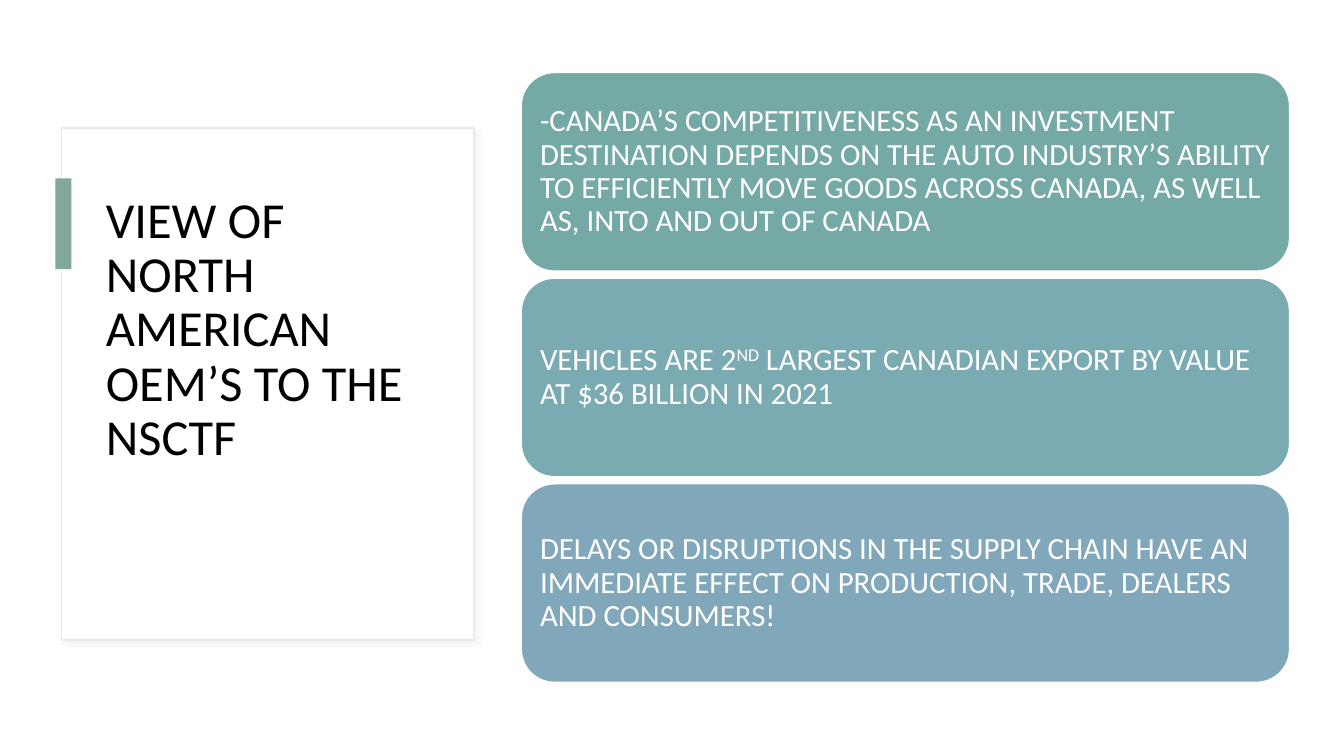
from dataclasses import dataclass

from lxml.etree import SubElement
from pptx import Presentation
from pptx.dml.color import RGBColor
from pptx.enum.shapes import MSO_SHAPE
from pptx.enum.text import MSO_ANCHOR, MSO_AUTO_SIZE, PP_ALIGN
from pptx.oxml.ns import qn
from pptx.shapes.autoshape import Shape
from pptx.slide import Slide
from pptx.text.text import TextFrame
from pptx.util import Inches, Pt

WHITE = RGBColor(0xFF, 0xFF, 0xFF)
BLACK = RGBColor(0x00, 0x00, 0x00)
PANEL_LINE = RGBColor(0xE5, 0xEA, 0xF0)
ACCENT_GREEN = RGBColor(0x81, 0xAA, 0x96)
TEAL = RGBColor(0x74, 0xA9, 0xA5)
AQUA = RGBColor(0x7A, 0xAB, 0xB2)
STEEL_BLUE = RGBColor(0x81, 0xA7, 0xBB)
SHADOW_GREY = "D9D9D9"

FONT = "Calibri"
CARD_LEFT, CARD_TOP = 5.17, 0.72
CARD_WIDTH, CARD_HEIGHT = 7.62, 1.97
CARD_PITCH = 2.04


@dataclass(frozen=True)
class Box:
    """A rectangle in inches."""
    left: float
    top: float
    width: float
    height: float

    def lengths(self) -> tuple[int, ...]:
        return tuple(Inches(value) for value in
                     (self.left, self.top, self.width, self.height))


@dataclass(frozen=True)
class Span:
    text: str
    superscript: bool = False


@dataclass(frozen=True)
class Card:
    fill: RGBColor
    spans: tuple[Span, ...]


CARDS = (
    Card(TEAL, (Span("-CANADA’S COMPETITIVENESS AS AN INVESTMENT DESTINATION "
                     "DEPENDS ON THE AUTO INDUSTRY’S ABILITY TO EFFICIENTLY "
                     "MOVE GOODS ACROSS CANADA, AS WELL AS, INTO AND OUT OF "
                     "CANADA"),)),
    Card(AQUA, (Span("VEHICLES ARE 2"), Span("ND", superscript=True),
                Span(" LARGEST CANADIAN EXPORT BY VALUE AT $36 BILLION IN 2021"))),
    Card(STEEL_BLUE, (Span("DELAYS OR DISRUPTIONS IN THE SUPPLY CHAIN HAVE AN "
                           "IMMEDIATE EFFECT ON PRODUCTION, TRADE, DEALERS AND "
                           "CONSUMERS!"),)),
)


def write(frame: TextFrame, spans: tuple[Span, ...], *, size: float,
          color: RGBColor, anchor: MSO_ANCHOR, side_inset: float = 0.1,
          end_inset: float = 0.05) -> None:
    frame.word_wrap = True
    frame.auto_size = MSO_AUTO_SIZE.NONE
    frame.vertical_anchor = anchor
    frame.margin_left = frame.margin_right = Inches(side_inset)
    frame.margin_top = frame.margin_bottom = Inches(end_inset)
    para = frame.paragraphs[0]
    para.alignment = PP_ALIGN.LEFT
    para.line_spacing = 0.9
    for span in spans:
        run = para.add_run()
        run.text = span.text
        run.font.name = FONT
        run.font.size = Pt(size)
        run.font.color.rgb = color
        if span.superscript:
            run._r.get_or_add_rPr().set("baseline", "30000")


def add_block(page: Slide, kind: MSO_SHAPE, box: Box, fill: RGBColor,
              line: RGBColor | None = None) -> Shape:
    block = page.shapes.add_shape(kind, *box.lengths())
    block.shadow.inherit = False
    block.fill.solid()
    block.fill.fore_color.rgb = fill
    if line is None:
        block.line.fill.background()
    else:
        block.line.color.rgb = line
        block.line.width = Pt(1)
    return block


def add_soft_shadow(block: Shape) -> None:
    effects = block._element.spPr.find(qn("a:effectLst"))
    shadow = SubElement(effects, qn("a:outerShdw"), blurRad=str(Pt(4)),
                        dist=str(Pt(3)), dir=str(45 * 60000),
                        algn="tl", rotWithShape="0")
    color = SubElement(shadow, qn("a:srgbClr"), val=SHADOW_GREY)
    SubElement(color, qn("a:alpha"), val="30000")


def add_title(page: Slide) -> None:
    panel = add_block(page, MSO_SHAPE.RECTANGLE, Box(0.61, 1.27, 4.09, 5.08),
                      WHITE, PANEL_LINE)
    add_soft_shadow(panel)
    title = page.shapes.title
    title._element.addprevious(panel._element)
    title.left, title.top, title.width, title.height = Box(
        0.95, 1.88, 3.39, 3.85).lengths()
    write(title.text_frame, (Span("VIEW OF NORTH AMERICAN OEM’S TO THE NSCTF"),),
          size=36, color=BLACK, anchor=MSO_ANCHOR.TOP)
    add_block(page, MSO_SHAPE.RECTANGLE, Box(0.55, 1.77, 0.16, 0.9), ACCENT_GREEN)


def add_cards(page: Slide) -> None:
    for row, card in enumerate(CARDS):
        box = Box(CARD_LEFT, CARD_TOP + row * CARD_PITCH, CARD_WIDTH, CARD_HEIGHT)
        block = add_block(page, MSO_SHAPE.ROUNDED_RECTANGLE, box, card.fill, WHITE)
        write(block.text_frame, card.spans, size=22, color=WHITE,
              anchor=MSO_ANCHOR.MIDDLE, side_inset=0.09, end_inset=0.09)


def main() -> None:
    deck = Presentation()
    deck.slide_width, deck.slide_height = Inches(13.33), Inches(7.5)
    page = deck.slides.add_slide(deck.slide_layouts.get_by_name("Title Only"))
    page.background.fill.solid()
    page.background.fill.fore_color.rgb = WHITE
    add_title(page)
    add_cards(page)
    deck.save("out.pptx")


if __name__ == "__main__":
    main()
